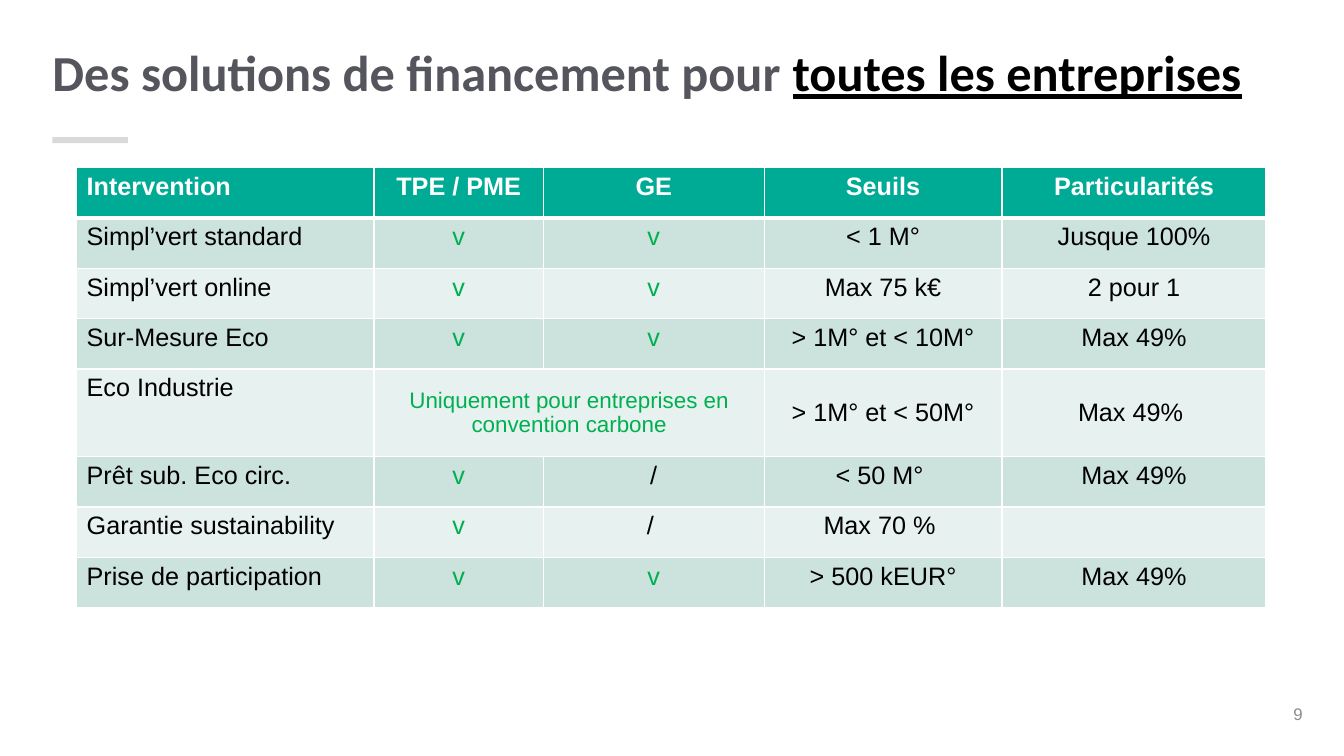
from dataclasses import dataclass

from lxml import etree
from pptx import Presentation
from pptx import util as u
from pptx.dml import color
from pptx.enum import shapes, text
from pptx.oxml import ns

SLIDE_W, SLIDE_H = 13.33, 7.5
COLOURS = {
    "header": "00AB95", "odd": "CCE2DD", "even": "E7F1EF", "white": "FFFFFF",
    "black": "000000", "check": "00B050", "title": "55555D",
    "accent": "D9D9D9", "number": "8C8C8C",
}
# Column widths and row heights, in percent of the slide
COLUMNS = [22.13, 12.6, 16.43, 17.7, 19.65]
ROW, TALL_ROW = 6.67, 11.6


@dataclass
class Box:
    """A rectangle in percent of the slide's width and height."""
    left: float
    top: float
    width: float
    height: float

    def lengths(self) -> tuple:
        return across(self.left), down(self.top), across(self.width), down(self.height)


@dataclass
class Solution:
    name: str
    small: str
    large: str
    threshold: str
    feature: str
    merged: bool = False

    def texts(self) -> list[str]:
        return [self.name, self.small, self.large, self.threshold, self.feature]


HEADER = Solution("Intervention", "TPE / PME", "GE", "Seuils", "Particularités")
SOLUTIONS = [
    Solution("Simpl’vert standard", "v", "v", "< 1 M°", "Jusque 100%"),
    Solution("Simpl’vert online", "v", "v", "Max 75 k€", "2 pour 1"),
    Solution("Sur-Mesure Eco", "v", "v", "> 1M° et < 10M°", "Max 49%"),
    Solution("Eco Industrie", "Uniquement pour entreprises en convention carbone", "",
             "> 1M° et < 50M°", "Max 49% ", merged=True),
    Solution("Prêt sub. Eco circ.", "v", "/", "< 50 M° ", "Max 49%"),
    Solution("Garantie sustainability", "v", "/ ", "Max 70 % ", ""),
    Solution("Prise de participation", "v", "v", "> 500 kEUR°", "Max 49%"),
]


def across(percent: float) -> int:
    return u.Inches(SLIDE_W * percent / 100)


def down(percent: float) -> int:
    return u.Inches(SLIDE_H * percent / 100)


def rgb(name: str) -> color.RGBColor:
    return color.RGBColor.from_string(COLOURS[name])


def style(run, size: float, colour: str, bold: bool = False, face: str = "Arial") -> None:
    run.font.name, run.font.size, run.font.bold = face, u.Pt(size), bold
    run.font.color.rgb = rgb(colour)


def add_borders(cell, top: float, bottom: float) -> None:
    properties = cell._tc.get_or_add_tcPr()
    for side, points in (("L", 1), ("R", 1), ("T", top), ("B", bottom)):
        line = etree.SubElement(properties, ns.qn(f"a:ln{side}"), w=str(u.Pt(points)))
        fill = etree.SubElement(line, ns.qn("a:solidFill"))
        etree.SubElement(fill, ns.qn("a:srgbClr"), val=COLOURS["white"])


def fill_row(table, index: int, solution: Solution) -> None:
    is_header = index == 0
    background = "header" if is_header else "odd" if index % 2 else "even"
    table.rows[index].height = down(TALL_ROW if solution.merged else ROW)
    for column, wording in enumerate(solution.texts()):
        cell = table.cell(index, column)
        add_borders(cell, 3 if index == 1 else 1, 3 if is_header else 1)
        cell.fill.solid()
        cell.fill.fore_color.rgb = rgb(background)
        if solution.merged and column:
            cell.vertical_anchor = text.MSO_ANCHOR.MIDDLE
        paragraph = cell.text_frame.paragraphs[0]
        paragraph.text = wording
        paragraph.font.size = u.Pt(18)
        if column:
            paragraph.alignment = text.PP_ALIGN.CENTER
        is_note = solution.merged and column == 1
        is_green = is_note or wording == "v"
        ink = "white" if is_header else "check" if is_green else "black"
        for run in paragraph.runs:
            style(run, 16 if is_note else 18, ink, bold=is_header)
    if solution.merged:
        table.cell(index, 1).merge(table.cell(index, 2))


def add_solutions(slide, box: Box) -> None:
    lines = [HEADER, *SOLUTIONS]
    table = slide.shapes.add_table(len(lines), len(COLUMNS), *box.lengths()).table
    for column, width in zip(table.columns, COLUMNS):
        column.width = across(width)
    for index, solution in enumerate(lines):
        fill_row(table, index, solution)


def add_title(slide, box: Box) -> None:
    title = slide.shapes.title
    title.left, title.top, title.width, title.height = box.lengths()
    frame = title.text_frame
    frame.vertical_anchor = text.MSO_ANCHOR.MIDDLE
    frame.auto_size = text.MSO_AUTO_SIZE.NONE
    paragraph = frame.paragraphs[0]
    paragraph.alignment, paragraph.line_spacing = text.PP_ALIGN.LEFT, 0.9
    for wording, colour, underlined in (
        ("Des solutions de financement pour ", "title", False),
        ("toutes les entreprises", "black", True),
    ):
        run = paragraph.add_run()
        run.text = wording
        style(run, 36, colour, bold=True, face="Calibri")
        run.font.underline = underlined


def add_accent(slide, box: Box) -> None:
    accent = slide.shapes.add_shape(shapes.MSO_SHAPE.RECTANGLE, *box.lengths())
    accent.shadow.inherit = False
    accent.fill.solid()
    accent.fill.fore_color.rgb = rgb("accent")
    accent.line.fill.background()


def add_page_number(slide, box: Box) -> None:
    frame = slide.shapes.add_textbox(*box.lengths()).text_frame
    frame.text = "9"
    frame.word_wrap = True
    frame.margin_right = 0
    frame.vertical_anchor = text.MSO_ANCHOR.MIDDLE
    frame.paragraphs[0].alignment = text.PP_ALIGN.RIGHT
    style(frame.paragraphs[0].runs[0], 12, "number")


def main() -> None:
    deck = Presentation()
    deck.slide_width, deck.slide_height = u.Inches(SLIDE_W), u.Inches(SLIDE_H)
    slide = deck.slides.add_slide(deck.slide_layouts[5])
    add_accent(slide, Box(3.9, 18.13, 5.63, 0.8))
    add_page_number(slide, Box(92.05, 91.73, 4.88, 5.33))
    add_title(slide, Box(3.15, 3.87, 93.85, 12.13))
    add_solutions(slide, Box(5.7, 22.13, sum(COLUMNS), 7 * ROW + TALL_ROW))
    deck.save("out.pptx")


if __name__ == "__main__":
    main()
